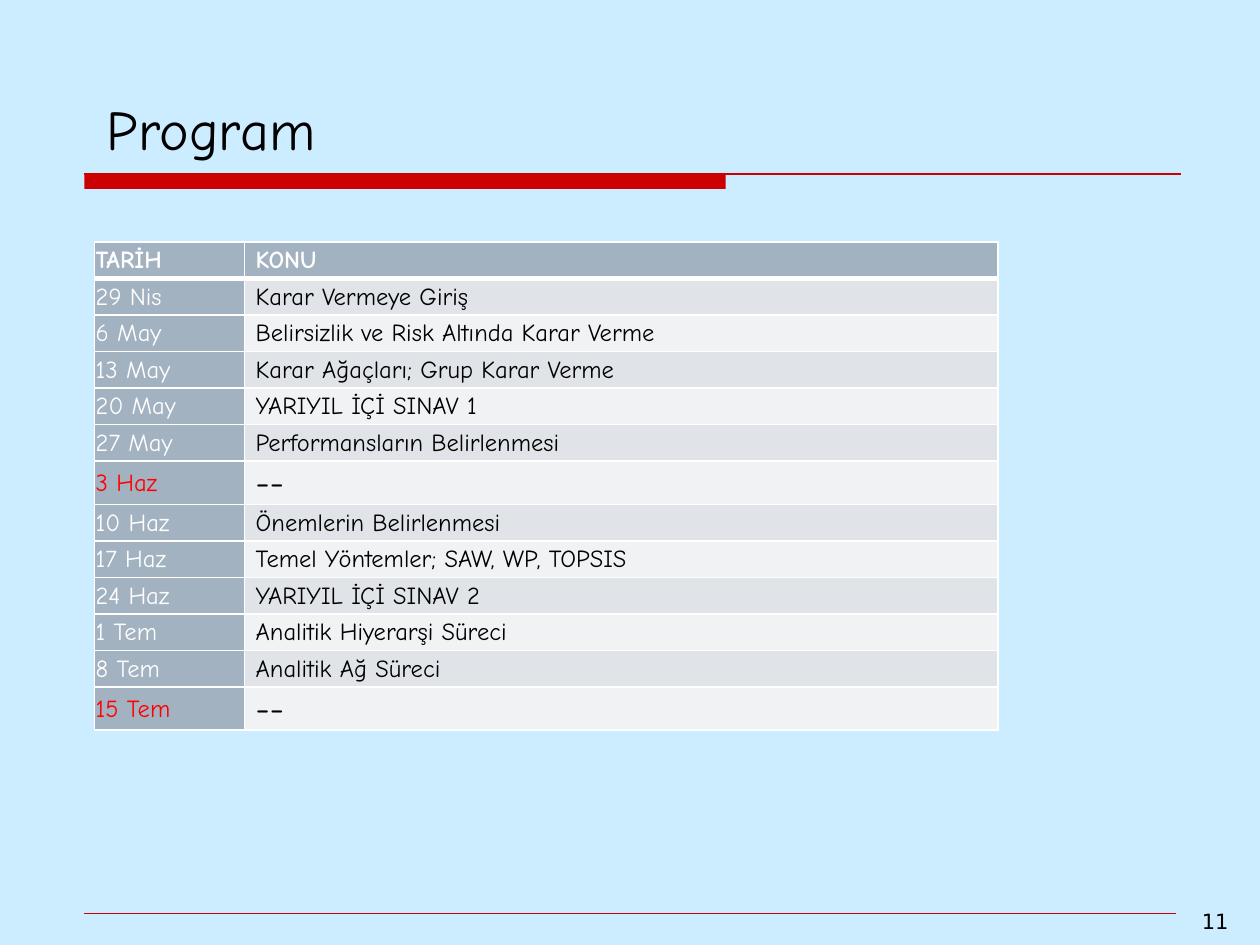
from dataclasses import dataclass
from typing import NamedTuple

import lxml.etree
import pptx
import pptx.dml.color
import pptx.enum.shapes
import pptx.enum.text
import pptx.oxml.ns
import pptx.util

Inches = pptx.util.Inches
Anchor = pptx.enum.text.MSO_ANCHOR
qn = pptx.oxml.ns.qn


@dataclass(frozen=True)
class Theme:
    background: str = "CCECFF"
    accent: str = "CC0000"
    text: str = "000000"
    light: str = "FFFFFF"
    holiday: str = "FF0000"
    header_fill: str = "A3B2C1"
    band_fills: tuple[str, str] = ("E0E4E9", "F0F2F4")
    font: str = "Comic Neue"
    number_font: str = "DejaVu Sans"
    title_size: int = 32
    table_size: int = 14
    dash_size: int = 20
    number_size: int = 12


class Session(NamedTuple):
    date: str
    topic: str
    holiday: bool = False


class TextStyle(NamedTuple):
    size: int
    color: str
    font: str
    bold: bool = False


class Rule(NamedTuple):
    left: float
    right: float
    top: float
    weight: float


THEME = Theme()
HEADINGS = ("TARİH", "KONU")
SESSIONS = [
    Session("29 Nis", "Karar Vermeye Giriş"),
    Session("6 May", "Belirsizlik ve Risk Altında Karar Verme"),
    Session("13 May", "Karar Ağaçları; Grup Karar Verme"),
    Session("20 May", "YARIYIL İÇİ SINAV 1"),
    Session("27 May", "Performansların Belirlenmesi"),
    Session("3 Haz", "--", True),
    Session("10 Haz", "Önemlerin Belirlenmesi"),
    Session("17 Haz", "Temel Yöntemler; SAW, WP, TOPSIS"),
    Session("24 Haz", "YARIYIL İÇİ SINAV 2"),
    Session("1 Tem", "Analitik Hiyerarşi Süreci"),
    Session("8 Tem", "Analitik Ağ Süreci"),
    Session("15 Tem", "--", True),
]
RULES = [Rule(0.67, 9.37, 1.38, 0.75), Rule(0.67, 9.33, 7.25, 0.25)]
COLUMN_WIDTHS = (1.19, 5.98)
ROW_HEIGHT = 0.29
TOPIC_INDENT = 0.08


def rgb(color: str) -> pptx.dml.color.RGBColor:
    return pptx.dml.color.RGBColor.from_string(color)


def write_text(text_frame, text: str, style: TextStyle) -> None:
    paragraph = text_frame.paragraphs[0]
    paragraph.text = text
    font = paragraph.font
    font.name, font.size, font.bold = style.font, pptx.util.Pt(style.size), style.bold
    font.color.rgb = rgb(style.color)


def add_text(slide, box: tuple[float, float, float, float], text: str,
             style: TextStyle, anchor: Anchor) -> None:
    text_frame = slide.shapes.add_textbox(*map(Inches, box)).text_frame
    text_frame.word_wrap = True
    text_frame.vertical_anchor = anchor
    write_text(text_frame, text, style)


def add_rule(slide, rule: Rule) -> None:
    connector = slide.shapes.add_connector(
        pptx.enum.shapes.MSO_CONNECTOR.STRAIGHT,
        Inches(rule.left), Inches(rule.top), Inches(rule.right), Inches(rule.top))
    connector.line.color.rgb = rgb(THEME.accent)
    connector.line.width = pptx.util.Pt(rule.weight)
    lxml.etree.SubElement(connector._element.spPr, qn("a:effectLst"))


def set_borders(cell, top: float, bottom: float) -> None:
    properties = cell._tc.get_or_add_tcPr()
    # Borders must come before the fill in the cell properties
    for position, (side, weight) in enumerate(
            (("L", 1), ("R", 1), ("T", top), ("B", bottom))):
        border = lxml.etree.Element(qn(f"a:ln{side}"), w=str(pptx.util.Pt(weight)))
        fill = lxml.etree.SubElement(border, qn("a:solidFill"))
        lxml.etree.SubElement(fill, qn("a:srgbClr"), val=THEME.light)
        properties.insert(position, border)


def fill_cell(cell, text: str, fill: str, style: TextStyle, indent: float) -> None:
    cell.margin_left = cell.margin_top = cell.margin_right = Inches(0.01)
    cell.margin_bottom = 0
    cell.vertical_anchor = Anchor.MIDDLE
    cell.fill.solid()
    cell.fill.fore_color.rgb = rgb(fill)
    write_text(cell.text_frame, text, style)
    if indent:
        properties = cell.text_frame.paragraphs[0]._p.get_or_add_pPr()
        properties.set("marL", "0")
        properties.set("indent", str(Inches(indent)))


def add_schedule(slide) -> None:
    row_count = len(SESSIONS) + 1
    table = slide.shapes.add_table(
        row_count, len(COLUMN_WIDTHS), Inches(0.75), Inches(1.92),
        Inches(sum(COLUMN_WIDTHS)), Inches(ROW_HEIGHT * row_count)).table
    for column, width in zip(table.columns, COLUMN_WIDTHS):
        column.width = Inches(width)
    for row in table.rows:
        row.height = Inches(ROW_HEIGHT)

    # Header row
    heading_style = TextStyle(THEME.table_size, THEME.light, THEME.font, True)
    for index, heading in enumerate(HEADINGS):
        cell = table.cell(0, index)
        fill_cell(cell, heading, THEME.header_fill, heading_style, index * TOPIC_INDENT)
        set_borders(cell, 1, 3)

    # One row per session, with alternating bands
    for index, session in enumerate(SESSIONS):
        date_color = THEME.holiday if session.holiday else THEME.light
        topic_size = THEME.dash_size if session.holiday else THEME.table_size
        date_cell, topic_cell = table.cell(index + 1, 0), table.cell(index + 1, 1)
        fill_cell(date_cell, session.date, THEME.header_fill,
                  TextStyle(THEME.table_size, date_color, THEME.font), 0)
        fill_cell(topic_cell, session.topic, THEME.band_fills[index % 2],
                  TextStyle(topic_size, THEME.text, THEME.font), TOPIC_INDENT)
        for cell in (date_cell, topic_cell):
            set_borders(cell, 3 if index == 0 else 1, 1)


def main() -> None:
    presentation = pptx.Presentation()
    presentation.slide_width, presentation.slide_height = Inches(10), Inches(7.5)
    slide = presentation.slides.add_slide(presentation.slide_layouts[6])
    slide.background.fill.solid()
    slide.background.fill.fore_color.rgb = rgb(THEME.background)

    # Accent bar and rules
    bar = slide.shapes.add_shape(
        pptx.enum.shapes.MSO_SHAPE.RECTANGLE,
        Inches(0.67), Inches(1.38), Inches(5.09), Inches(0.12))
    bar.shadow.inherit = False
    bar.fill.solid()
    bar.fill.fore_color.rgb = rgb(THEME.accent)
    bar.line.fill.background()
    for rule in RULES:
        add_rule(slide, rule)

    # Slide number, title and schedule
    add_text(slide, (9.44, 7.16, 0.53, 0.3), "11",
             TextStyle(THEME.number_size, THEME.text, THEME.number_font), Anchor.TOP)
    add_text(slide, (0.75, 0.25, 8.75, 1.08), "Program",
             TextStyle(THEME.title_size, THEME.text, THEME.font), Anchor.BOTTOM)
    add_schedule(slide)
    presentation.save("out.pptx")


if __name__ == "__main__":
    main()
